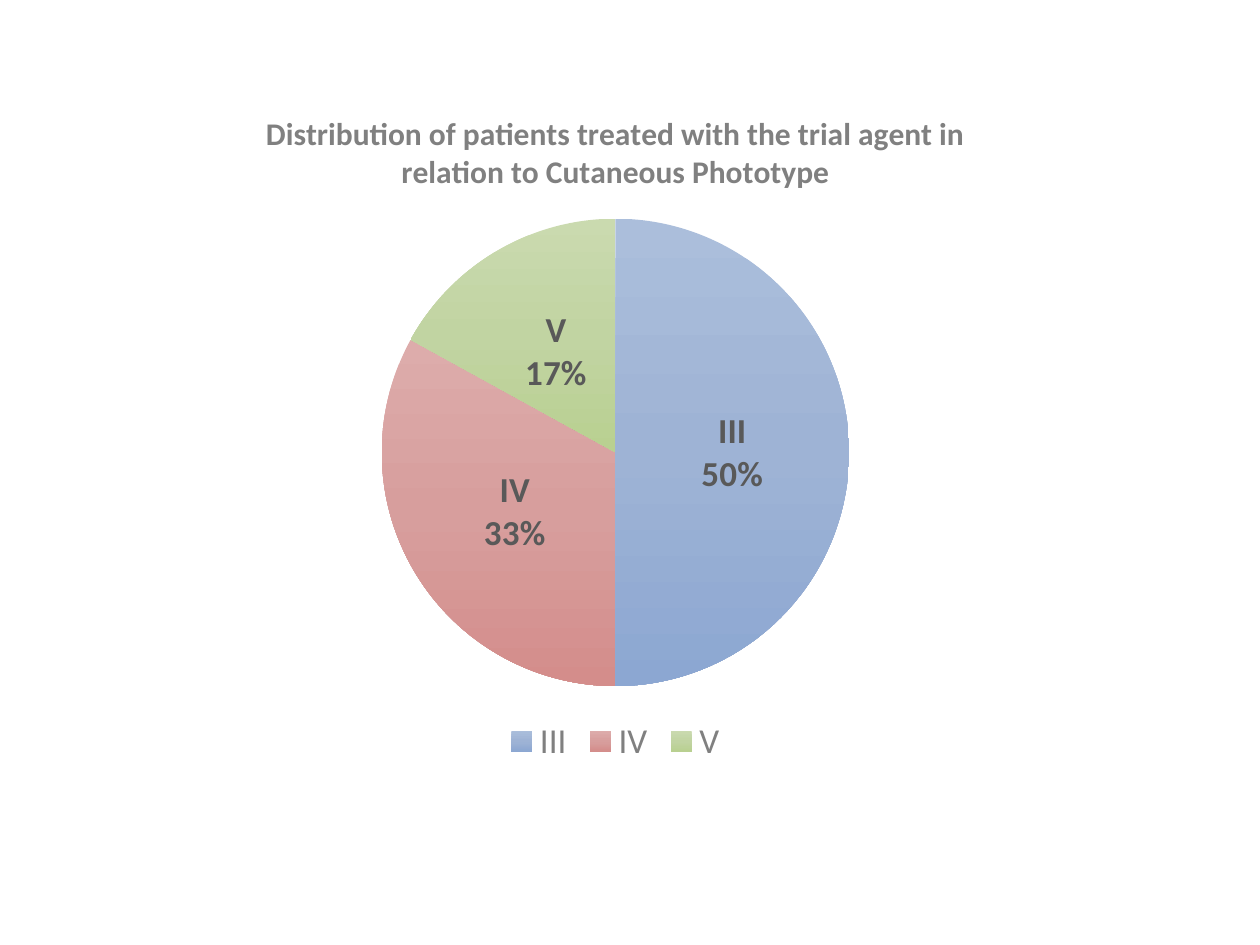
from dataclasses import dataclass

from lxml.etree import SubElement
from pptx import Presentation
from pptx.chart.chart import Chart
from pptx.chart.data import CategoryChartData
from pptx.dml.color import RGBColor
from pptx.enum.chart import XL_CHART_TYPE, XL_LABEL_POSITION, XL_LEGEND_POSITION
from pptx.oxml.ns import qn
from pptx.util import Pt

GRAY = RGBColor(0x80, 0x80, 0x80)
DARK_GRAY = RGBColor(0x59, 0x59, 0x59)
BLUES = (RGBColor(0xAB, 0xBE, 0xDB), RGBColor(0x9E, 0xB3, 0xD5), RGBColor(0x8C, 0xA7, 0xD2))
REDS = (RGBColor(0xDD, 0xAC, 0xAB), RGBColor(0xD7, 0x9E, 0x9D), RGBColor(0xD4, 0x8D, 0x8B))
GREENS = (RGBColor(0xCA, 0xDA, 0xAF), RGBColor(0xC1, 0xD4, 0xA2), RGBColor(0xB9, 0xD0, 0x91))
TITLE = "Distribution of patients treated with the trial agent in relation to Cutaneous Phototype"


@dataclass(frozen=True)
class Phototype:
    name: str
    percent: int
    shades: tuple[RGBColor, ...]


PHOTOTYPES = (
    Phototype("III", 50, BLUES),
    Phototype("IV", 33, REDS),
    Phototype("V", 17, GREENS),
)


def set_format(target, **values) -> None:
    color = values.pop("color", None)
    for name, value in values.items():
        setattr(target, name, value)
    if color is not None:
        target.color.rgb = color


def fill_slices(chart: Chart) -> None:
    """Shade each slice from top to bottom with evenly spaced gradient stops."""
    series = chart.plots[0].series[0]
    for i, phototype in enumerate(PHOTOTYPES):
        fill = series.points[i].format.fill
        fill.gradient()
        fill.gradient_angle = 270
    stop_lists = series._element.iter(qn("a:gsLst"))
    for phototype, stops in zip(PHOTOTYPES, list(stop_lists)):
        for stop in list(stops):
            stops.remove(stop)
        for i, shade in enumerate(phototype.shades):
            stop = SubElement(stops, qn("a:gs"), pos=str(i * 50000))
            SubElement(stop, qn("a:srgbClr"), val=str(shade))


def add_phototype_chart(s) -> None:
    data = CategoryChartData()
    data.categories = [p.name for p in PHOTOTYPES]
    data.add_series("Series 1", [p.percent for p in PHOTOTYPES])
    chart = s.shapes.add_chart(
        XL_CHART_TYPE.PIE, Pt(65.5), Pt(49), Pt(572.4), Pt(391), data
    ).chart
    set_format(chart.font, name="Calibri", size=Pt(10))

    chart.has_title = True
    tf = chart.chart_title.text_frame
    tf.text = TITLE
    set_format(tf.paragraphs[0].runs[0].font, name="Calibri", size=Pt(18), bold=True, color=GRAY)
    chart.chart_title.include_in_layout = False

    chart.has_legend = True
    set_format(chart.legend, position=XL_LEGEND_POSITION.BOTTOM, include_in_layout=False)
    set_format(chart.legend.font, name="Calibri", size=Pt(20), color=GRAY)

    plot = chart.plots[0]
    set_format(plot, vary_by_categories=True, has_data_labels=True)
    labels = plot.data_labels
    set_format(
        labels,
        show_category_name=True,
        show_percentage=True,
        show_value=False,
        position=XL_LABEL_POSITION.CENTER,
    )
    set_format(labels.font, name="Calibri", size=Pt(20), bold=True, color=DARK_GRAY)
    fill_slices(chart)


def main() -> None:
    prs = Presentation()
    prs.slide_width, prs.slide_height = Pt(720), Pt(540)
    s = prs.slides.add_slide(prs.slide_layouts[6])
    add_phototype_chart(s)
    prs.save("out.pptx")


if __name__ == "__main__":
    main()
